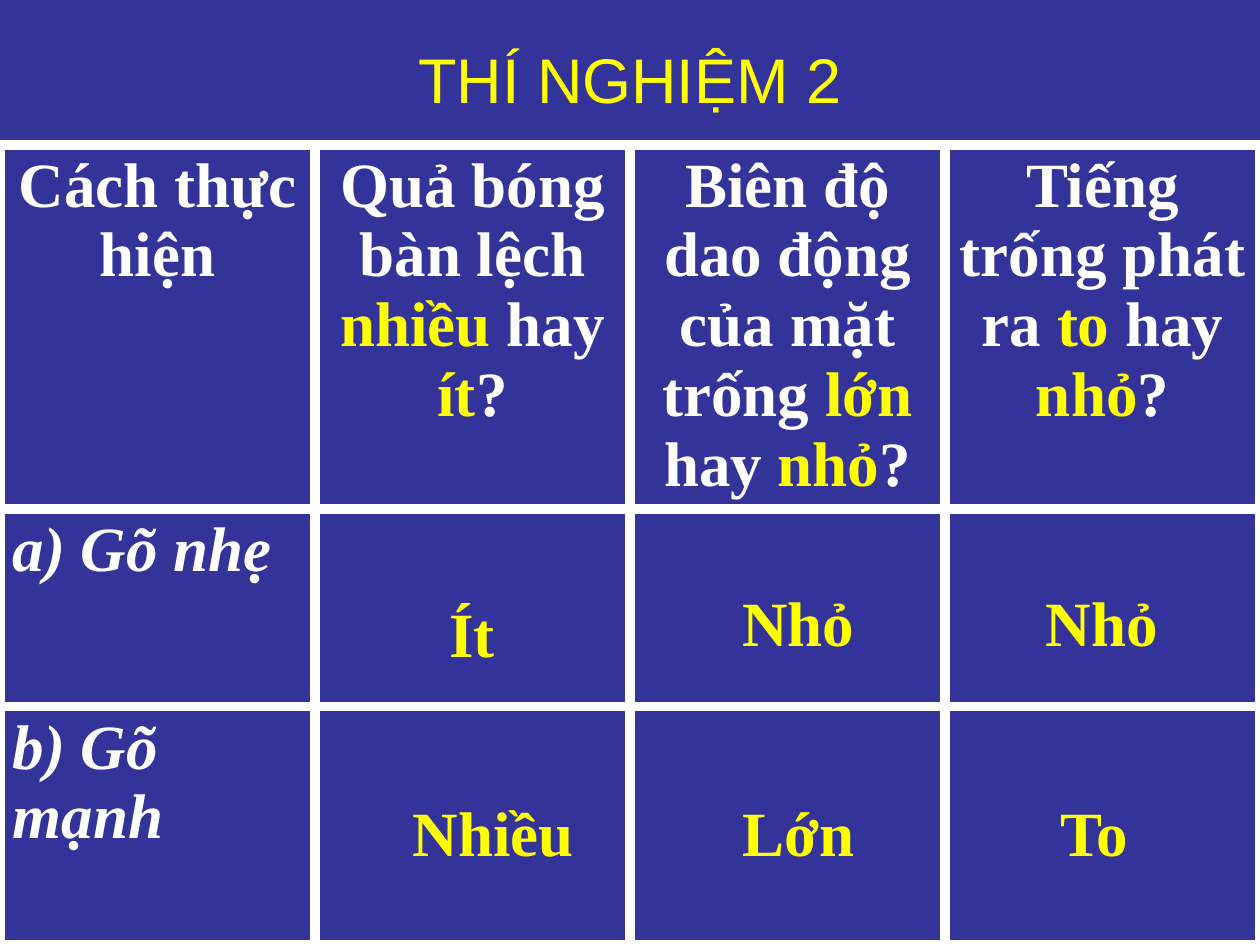
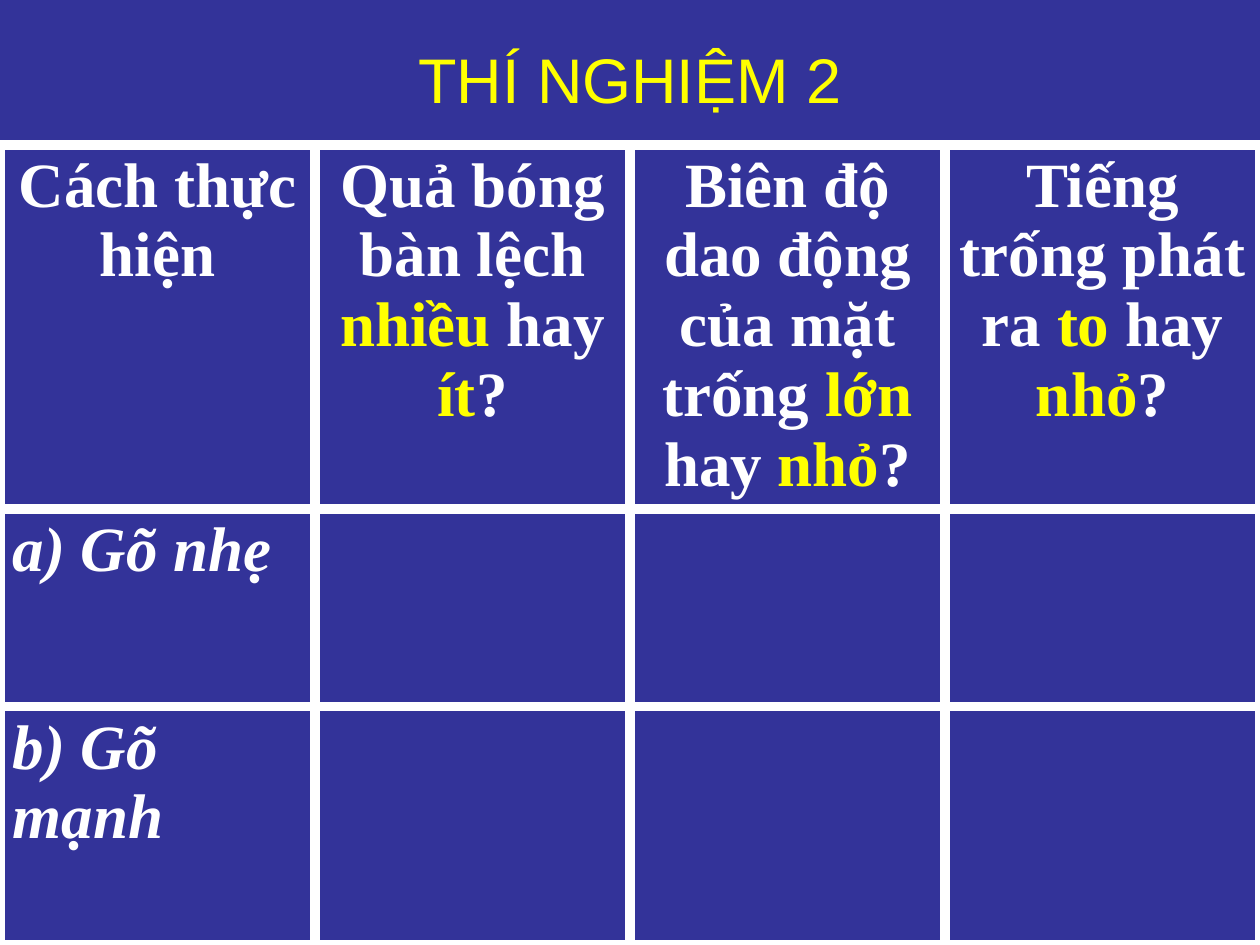
"""Build two slides on drum experiment 2: the table with answers, then blank."""
from typing import NamedTuple

from lxml.etree import SubElement
from pptx import Presentation
from pptx.dml.color import RGBColor
from pptx.enum.text import MSO_ANCHOR, MSO_AUTO_SIZE, PP_ALIGN
from pptx.oxml.ns import qn
from pptx.util import Pt

PX = 9144
WIDE, HIGH = 1000, 750
COLORS = {"band": "333399", "text": "FFFFFF", "mark": "FFFF00"}
SANS, SERIF = "Arial", "Times New Roman"
SIZE = Pt(36)
BORDER = Pt(6)
TOP = 115
ROWS = (289, 157, 189)
HEADS = (
    "Cách thực hiện",
    "Quả bóng bàn lệch *nhiều* hay *ít*?",
    "Biên độ dao động của mặt trống *lớn* hay *nhỏ*?",
    "Tiếng trống phát ra *to *hay *nhỏ*?",
)
STEPS = ("a) Gõ nhẹ", "b) Gõ mạnh")


class Answer(NamedTuple):
    text: str
    left: int
    top: int


ANSWERS = (
    Answer("Ít", 283, 467),
    Answer("Nhỏ", 542, 458),
    Answer("Nhỏ", 783, 458),
    Answer("Nhiều", 300, 625),
    Answer("Lớn", 542, 625),
    Answer("To ", 783, 625),
)


def color(name: str) -> RGBColor:
    return RGBColor.from_string(COLORS[name])


def style(para, face: str, bold: bool, align=PP_ALIGN.CENTER) -> None:
    para.alignment = align
    para.font.name = face
    para.font.size = SIZE
    para.font.bold = bold


def write(para, text: str) -> None:
    for index, part in enumerate(text.split("*")):
        if part:
            run = para.add_run()
            run.text = part
            run.font.color.rgb = color("mark" if index % 2 else "text")


def frame(cell) -> None:
    props = cell._tc.get_or_add_tcPr()
    for side in ("L", "R", "T", "B"):
        line = SubElement(props, qn(f"a:ln{side}"), w=str(BORDER))
        fill = SubElement(line, qn("a:solidFill"))
        SubElement(fill, qn("a:srgbClr"), val=COLORS["text"])
    cell.fill.solid()
    cell.fill.fore_color.rgb = color("band")


def add_title(slide, text: str) -> None:
    title = slide.shapes.title
    title.left, title.top, title.width, title.height = 0, 0, WIDE * PX, 125 * PX
    title.fill.solid()
    title.fill.fore_color.rgb = color("band")
    title.text_frame.text = text
    title.text_frame.vertical_anchor = MSO_ANCHOR.MIDDLE
    para = title.text_frame.paragraphs[0]
    style(para, SANS, False)
    para.font.color.rgb = color("mark")


def add_grid(slide) -> None:
    grid = slide.shapes.add_table(
        len(ROWS), len(HEADS), 0, TOP * PX, WIDE * PX, sum(ROWS) * PX
    ).table
    grid.first_row = grid.horz_banding = False
    for row, height in zip(grid.rows, ROWS):
        row.height = height * PX
    for cell in grid.iter_cells():
        frame(cell)
    for col, text in enumerate(HEADS):
        para = grid.cell(0, col).text_frame.paragraphs[0]
        style(para, SERIF, True)
        write(para, text)
    for row, text in enumerate(STEPS, 1):
        para = grid.cell(row, 0).text_frame.paragraphs[0]
        style(para, SERIF, True, PP_ALIGN.LEFT)
        para.font.italic = True
        write(para, text)


def add_answer(slide, answer: Answer) -> None:
    box = slide.shapes.add_textbox(
        answer.left * PX, answer.top * PX, 183 * PX, 70 * PX
    )
    box.text_frame.word_wrap = True
    box.text_frame.auto_size = MSO_AUTO_SIZE.SHAPE_TO_FIT_TEXT
    para = box.text_frame.paragraphs[0]
    style(para, SERIF, True)
    para.space_before = Pt(4)
    write(para, f"*{answer.text}*")


def main() -> None:
    deck = Presentation()
    deck.slide_width, deck.slide_height = WIDE * PX, HIGH * PX
    for answers in (ANSWERS, ()):
        slide = deck.slides.add_slide(deck.slide_layouts[5])
        add_title(slide, "THÍ NGHIỆM 2")
        add_grid(slide)
        for answer in answers:
            add_answer(slide, answer)
    deck.save("out.pptx")


if __name__ == "__main__":
    main()
